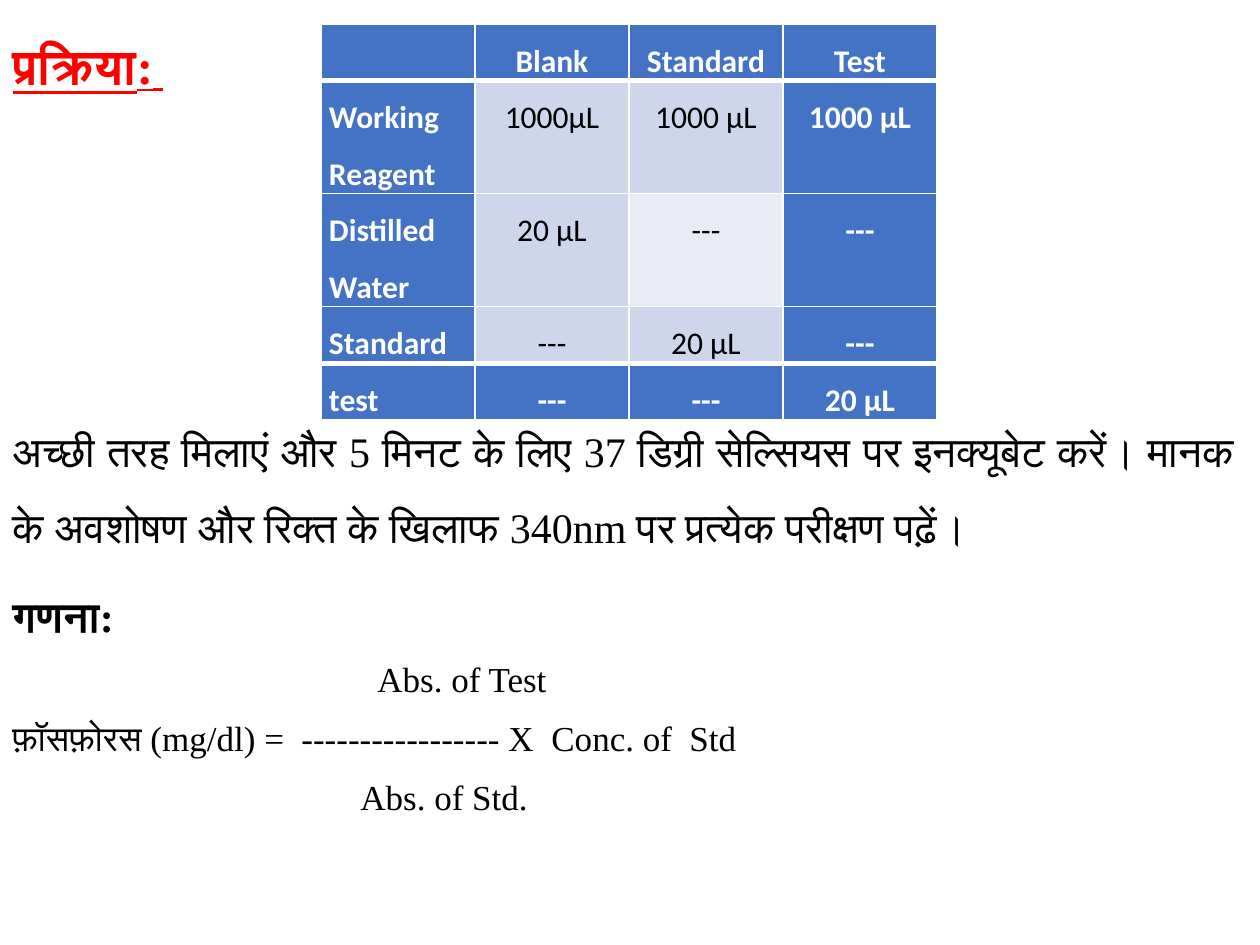
from dataclasses import dataclass
from typing import Optional

from lxml import etree
from pptx import Presentation
from pptx import util as u
from pptx.dml.color import RGBColor
from pptx.enum import text
from pptx.oxml import ns

SCALE = 914400 / 126
SERIF, SANS = "Times New Roman", "Calibri"
BLACK = RGBColor(0x00, 0x00, 0x00)
WHITE = RGBColor(0xFF, 0xFF, 0xFF)
RED = RGBColor(0xFF, 0x00, 0x00)
BLUE = RGBColor(0x44, 0x72, 0xC4)
BAND = RGBColor(0xCF, 0xD5, 0xEA)
PALE = RGBColor(0xE9, 0xEB, 0xF5)
LEFT, MID, JUST = text.PP_ALIGN.LEFT, text.PP_ALIGN.CENTER, text.PP_ALIGN.JUSTIFY


@dataclass
class Line:
    words: str
    size: int
    space: float
    bold: bool = False
    align: text.PP_ALIGN = JUST
    indent: int = 0
    tabs: tuple[int, ...] = ()


ROWS = [
    ("", "Blank", "Standard", "Test"),
    ("Working Reagent", "1000µL", "1000 µL", "1000 µL"),
    ("Distilled Water", "20 µL", "---", "---"),
    ("Standard", "---", "20 µL", "---"),
    ("test", "---", "---", "20 µL"),
]
HEIGHTS = (56, 113, 113, 56, 56)
COL = 154
LINES = [
    Line("अच्छी तरह मिलाएं और 5 मिनट के लिए 37 डिग्री सेल्सियस पर इनक्यूबेट करें। मानक "
         "के अवशोषण और रिक्त के खिलाफ 340nm पर प्रत्येक परीक्षण पढ़ें।", 24, 1.5),
    Line("गणना:", 24, 1.5, bold=True),
    Line("Abs. of Test", 20, 1.07, align=LEFT, indent=365),
    Line("फ़ॉसफ़ोरस (mg/dl) =\t----------------- X\tConc. of\tStd", 20, 1.07,
         align=LEFT, tabs=(289, 539, 677)),
    Line("Abs. of Std.", 20, 1.07, align=LEFT, indent=348),
]


def px(n: int) -> u.Emu:
    return u.Emu(round(n * SCALE))


def style(run, font: str, size: int, color: RGBColor, bold: bool) -> None:
    run.font.name, run.font.size, run.font.bold = font, u.Pt(size), bold
    run.font.color.rgb = color


def space(para, align: text.PP_ALIGN, gap: float) -> None:
    para.alignment, para.line_spacing = align, gap
    para.space_before, para.space_after = u.Pt(0), u.Pt(8)


def place(shape, x: int, y: int, w: int, h: int) -> None:
    shape.left, shape.top, shape.width, shape.height = map(px, (x, y, w, h))


def head(slide) -> None:
    box = slide.shapes.title
    place(box, 0, 0, 697, 91)
    frame = box.text_frame
    frame.word_wrap = True
    frame.auto_size = text.MSO_AUTO_SIZE.NONE
    frame.vertical_anchor = text.MSO_ANCHOR.TOP
    para = frame.paragraphs[0]
    space(para, JUST, 1.5)
    for words, size in (("प्रक्रिया:", 28), (" ", 24)):
        run = para.add_run()
        run.text = words
        style(run, SERIF, size, RED, True)
        run.font.underline = True


def edge(cell, top: int, base: int) -> None:
    """Draw white borders, with top and base widths in points."""
    props = cell._tc.get_or_add_tcPr()
    for i, (tag, width) in enumerate((("lnL", 1), ("lnR", 1), ("lnT", top), ("lnB", base))):
        line = etree.Element(ns.qn(f"a:{tag}"), w=str(u.Pt(width)))
        fill = etree.SubElement(line, ns.qn("a:solidFill"))
        etree.SubElement(fill, ns.qn("a:srgbClr"), val=str(WHITE))
        props.insert(i, line)


def shade(row: int, col: int) -> Optional[RGBColor]:
    """Give the fill of an inner cell, or None on the outer frame."""
    if row in (0, len(ROWS) - 1) or col in (0, 3):
        return None
    return PALE if (row, col) == (2, 2) else BAND


def grid(slide) -> None:
    last = len(ROWS) - 1
    table = slide.shapes.add_table(len(ROWS), 4, px(321), px(24),
                                   px(4 * COL), px(sum(HEIGHTS))).table
    for col in table.columns:
        col.width = px(COL)
    for r, row in enumerate(ROWS):
        table.rows[r].height = px(HEIGHTS[r])
        for c, words in enumerate(row):
            cell, tint = table.cell(r, c), shade(r, c)
            cell.margin_left = cell.margin_right = px(8)
            cell.margin_top = cell.margin_bottom = 0
            cell.fill.solid()
            cell.fill.fore_color.rgb = tint or BLUE
            edge(cell, 3 if r in (1, last) else 1, 3 if r in (0, last - 1) else 1)
            para = cell.text_frame.paragraphs[0]
            para.text = words
            space(para, MID if c else JUST, 1.47)
            for run in para.runs:
                style(run, SANS, 18, BLACK if tint else WHITE, tint is None)


def body(slide) -> None:
    frame = slide.shapes.add_textbox(px(0), px(394), px(1246), px(511)).text_frame
    frame.word_wrap = True
    for i, line in enumerate(LINES):
        para = frame.add_paragraph() if i else frame.paragraphs[0]
        para.text = line.words
        space(para, line.align, line.space)
        props = para._p.get_or_add_pPr()
        if line.indent:
            props.set("marL", str(px(line.indent)))
        if line.tabs:
            stops = etree.SubElement(props, ns.qn("a:tabLst"))
            for pos in line.tabs:
                etree.SubElement(stops, ns.qn("a:tab"), pos=str(px(pos)), algn="l")
        for run in para.runs:
            style(run, SERIF, line.size, BLACK, line.bold)


def main() -> None:
    deck = Presentation()
    deck.slide_width, deck.slide_height = px(1260), px(945)
    slide = deck.slides.add_slide(deck.slide_layouts[5])
    head(slide)
    grid(slide)
    body(slide)
    deck.save("out.pptx")


if __name__ == "__main__":
    main()
